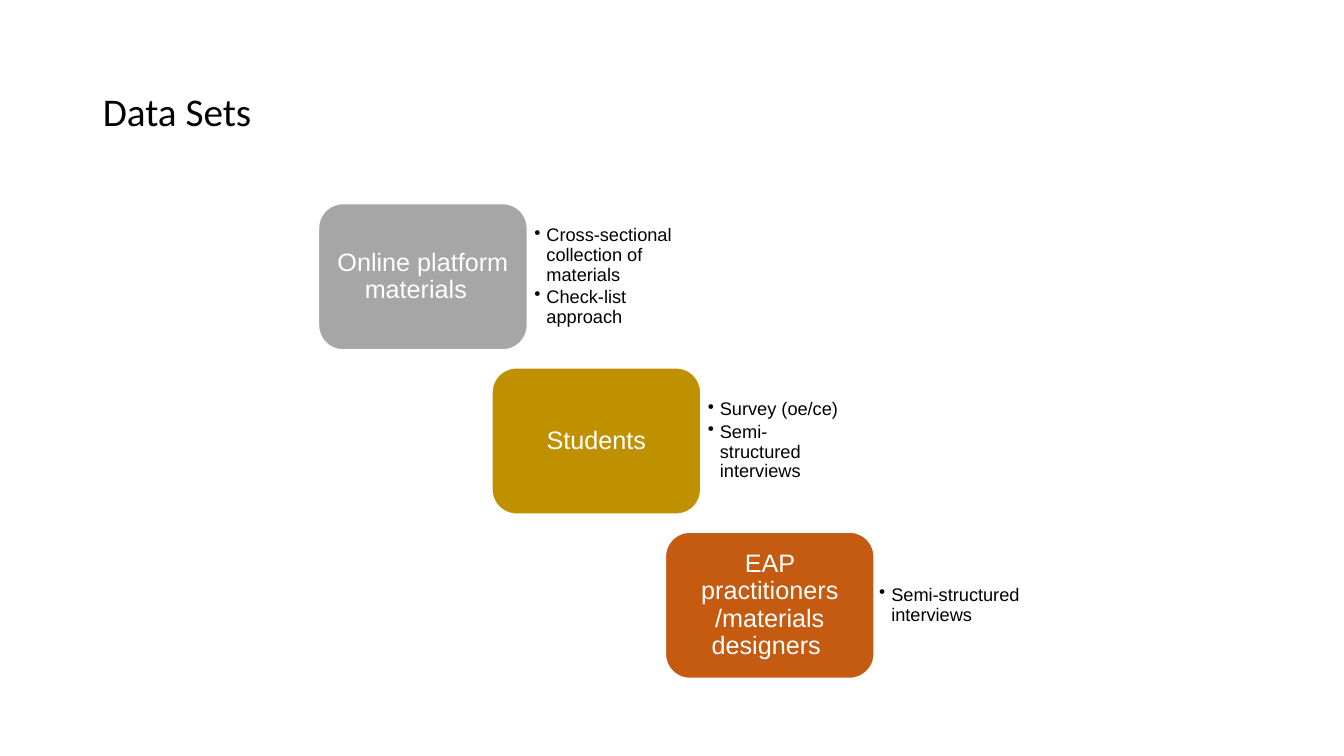
from lxml import etree
from pptx import Presentation
from pptx.dml.color import RGBColor
from pptx.enum.shapes import MSO_SHAPE
from pptx.enum.text import MSO_ANCHOR, PP_ALIGN
from pptx.oxml.ns import qn
from pptx.util import Inches, Pt

ROUNDED = MSO_SHAPE.ROUNDED_RECTANGLE
MIDDLE = MSO_ANCHOR.MIDDLE
LEFT, CENTER = PP_ALIGN.LEFT, PP_ALIGN.CENTER
TITLE_ONLY = 5

BOX_WIDTH, BOX_HEIGHT = 2.07, 1.45
FIRST_LEFT, FIRST_TOP = 3.16, 2.02
STEP_RIGHT, STEP_DOWN = 1.72, 1.63
NOTE_WIDTH, NOTE_HEIGHT = 1.51, 1.17
BULLET_INDENT = 0.12

DATA_SETS = [
    ("Online platform materials  ", "A6A6A6", 0.07,
     ["Cross-sectional collection of materials", "Check-list approach"]),
    ("Students", "BF9000", 0.07,
     ["Survey (oe/ce)", "Semi-structured interviews"]),
    ("EAP practitioners /materials designers ", "C55A11", 0.05,
     ["Semi-structured interviews"]),
]


def color(hex_text):
    return RGBColor.from_string(hex_text)


def apply(target, values):
    for name, value in values.items():
        setattr(target, name, value)


def set_frame(frame, inset):
    margin = Inches(inset)
    apply(frame, {"word_wrap": True, "vertical_anchor": MIDDLE,
                  "margin_left": margin, "margin_right": margin,
                  "margin_top": margin, "margin_bottom": margin})


def write(para, text, size, hex_text, align=LEFT, font="Arial", after=0):
    apply(para, {"alignment": align, "line_spacing": 0.9,
                 "space_before": Pt(0), "space_after": Pt(after)})
    span = para.add_run()
    span.text = text
    apply(span.font, {"name": font, "size": Pt(size), "bold": False})
    span.font.color.rgb = color(hex_text)


def add_bullet(para):
    properties = para._p.get_or_add_pPr()
    indent = Inches(BULLET_INDENT)
    properties.set("marL", str(indent))
    properties.set("indent", str(-indent))
    bullet = etree.SubElement(properties, qn("a:buChar"))
    bullet.set("char", "•")


def add_title(page, text):
    title = page.shapes.title
    apply(title, {"left": Inches(0.92), "top": Inches(0.4),
                  "width": Inches(11.5), "height": Inches(1.45)})
    title.text_frame.vertical_anchor = MIDDLE
    write(title.text_frame.paragraphs[0], text, 28, "000000", font="Calibri")


def add_step(page, left, top, text, fill):
    box = page.shapes.add_shape(ROUNDED, Inches(left), Inches(top),
                                Inches(BOX_WIDTH), Inches(BOX_HEIGHT))
    box.shadow.inherit = False
    box.fill.solid()
    box.fill.fore_color.rgb = color(fill)
    box.line.color.rgb = color("FFFFFF")
    box.line.width = Pt(1)
    set_frame(box.text_frame, 0.07)
    write(box.text_frame.paragraphs[0], text, 18, "FFFFFF", CENTER)


def add_notes(page, left, top, notes, inset):
    box = page.shapes.add_textbox(Inches(left), Inches(top),
                                  Inches(NOTE_WIDTH), Inches(NOTE_HEIGHT))
    frame = box.text_frame
    set_frame(frame, inset)
    for index, note in enumerate(notes):
        para = frame.add_paragraph() if index else frame.paragraphs[0]
        write(para, note, 13, "000000", after=2)
        add_bullet(para)


def main():
    deck = Presentation()
    deck.slide_width, deck.slide_height = Inches(13.33), Inches(7.5)
    page = deck.slides.add_slide(deck.slide_layouts[TITLE_ONLY])
    add_title(page, "Data Sets")
    for index, (name, fill, inset, notes) in enumerate(DATA_SETS):
        left = FIRST_LEFT + index * STEP_RIGHT
        top = FIRST_TOP + index * STEP_DOWN
        add_step(page, left, top, name, fill)
        note_top = top + (BOX_HEIGHT - NOTE_HEIGHT) / 2
        add_notes(page, left + BOX_WIDTH, note_top, notes, inset)
    deck.save("out.pptx")


if __name__ == "__main__":
    main()
